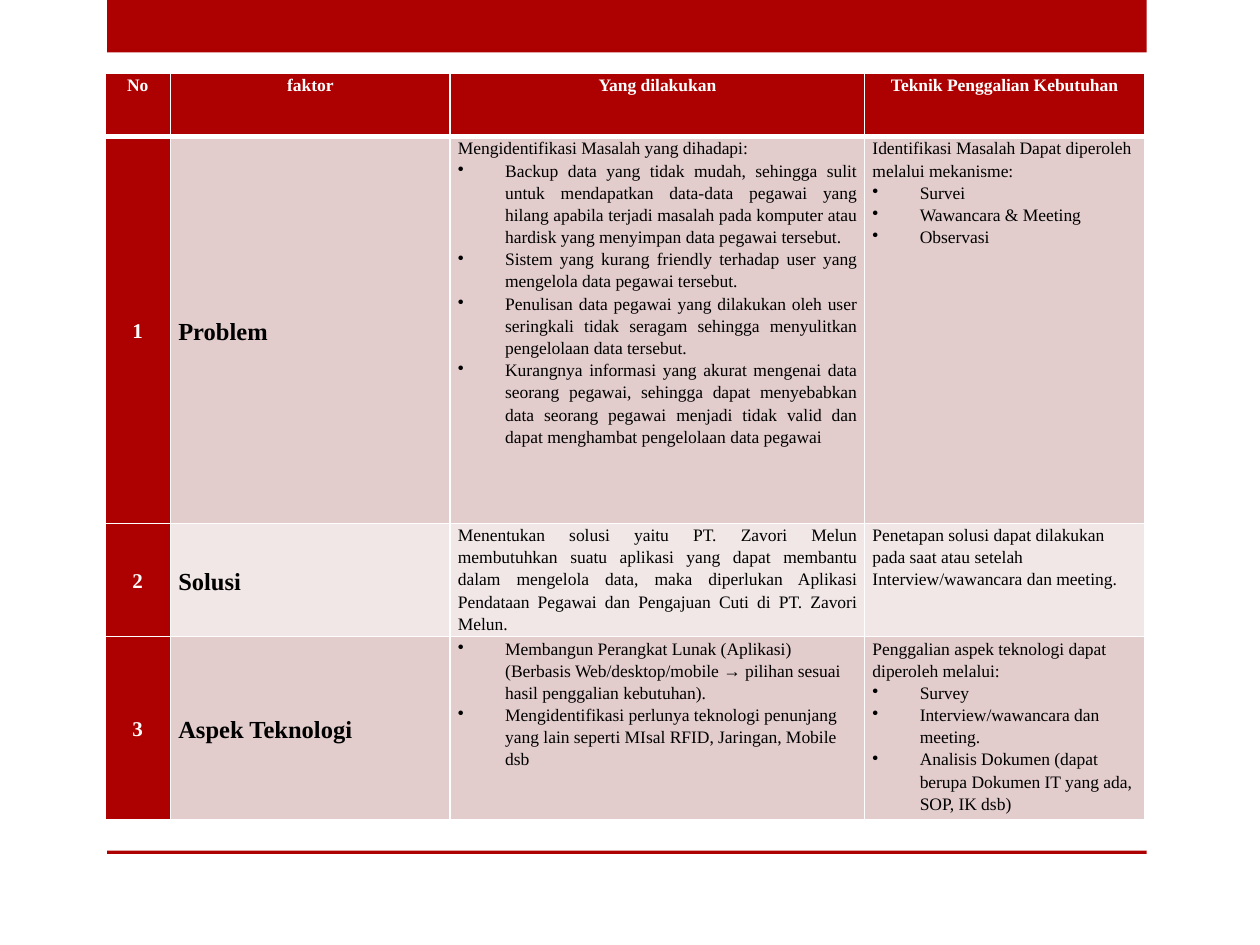
from dataclasses import dataclass

from lxml import etree
from pptx import Presentation
from pptx.dml.color import RGBColor
from pptx.enum.shapes import MSO_SHAPE
from pptx.enum.text import MSO_ANCHOR, PP_ALIGN
from pptx.oxml.ns import qn
from pptx.util import Pt

RECTANGLE = MSO_SHAPE.RECTANGLE
TOP, MIDDLE = MSO_ANCHOR.TOP, MSO_ANCHOR.MIDDLE
LEFT, CENTER, JUSTIFY = PP_ALIGN.LEFT, PP_ALIGN.CENTER, PP_ALIGN.JUSTIFY

FONT = "Times New Roman"
RED, WHITE, BLACK = "AD0101", "FFFFFF", "000000"
DARK_BAND, LIGHT_BAND = "E3CCCC", "F1E7E7"
COLUMN_WIDTHS = (37.4, 159.8, 236.9, 159.8)
ROW_HEIGHTS = (36, 221, 64.8, 104.4)
BULLET_INDENT = 27
THIN, THICK = 1, 3


@dataclass(frozen=True)
class Line:
    text: str
    bullet: bool = False
    align: PP_ALIGN = LEFT


@dataclass(frozen=True)
class Style:
    size: float
    color: str = BLACK
    bold: bool = False
    anchor: MSO_ANCHOR = TOP


@dataclass(frozen=True)
class Factor:
    name: str
    actions: list[Line]
    techniques: list[Line]


HEADER_STYLE = Style(10, WHITE, True)
NUMBER_STYLE = Style(12, WHITE, True, MIDDLE)
NAME_STYLE = Style(14, BLACK, True, MIDDLE)
BODY_STYLE = Style(10)


def bullets(*texts: str, align: PP_ALIGN = LEFT) -> list[Line]:
    return [Line(text, True, align) for text in texts]


HEADERS = ("No", "faktor", "Yang dilakukan", "Teknik Penggalian Kebutuhan")
FACTORS = (
    Factor(
        "Problem",
        [Line("Mengidentifikasi Masalah yang dihadapi:")]
        + bullets(
            "Backup data yang tidak mudah, sehingga sulit untuk mendapatkan data-data "
            "pegawai yang hilang apabila terjadi masalah pada komputer atau hardisk "
            "yang menyimpan data pegawai tersebut.",
            "Sistem yang kurang friendly terhadap user yang mengelola data pegawai "
            "tersebut.",
            "Penulisan data pegawai yang dilakukan oleh user seringkali tidak seragam "
            "sehingga menyulitkan pengelolaan data tersebut.",
            "Kurangnya informasi yang akurat mengenai data seorang pegawai, sehingga "
            "dapat menyebabkan data seorang pegawai menjadi tidak valid dan dapat "
            "menghambat pengelolaan data pegawai",
            align=JUSTIFY,
        ),
        [Line("Identifikasi Masalah Dapat diperoleh melalui mekanisme:")]
        + bullets("Survei", "Wawancara & Meeting", "Observasi"),
    ),
    Factor(
        "Solusi",
        [Line(
            "Menentukan solusi yaitu PT. Zavori Melun membutuhkan suatu aplikasi yang "
            "dapat membantu dalam mengelola data, maka diperlukan Aplikasi Pendataan "
            "Pegawai dan Pengajuan Cuti di PT. Zavori Melun.",
            align=JUSTIFY,
        )],
        [Line("Penetapan solusi dapat dilakukan pada saat atau setelah "
              "Interview/wawancara dan meeting.")],
    ),
    Factor(
        "Aspek Teknologi",
        bullets(
            "Membangun Perangkat Lunak (Aplikasi) (Berbasis Web/desktop/mobile → "
            "pilihan sesuai hasil penggalian kebutuhan).",
            "Mengidentifikasi perlunya teknologi penunjang yang lain seperti MIsal "
            "RFID, Jaringan, Mobile dsb",
        ),
        [Line("Penggalian aspek teknologi dapat diperoleh melalui:")]
        + bullets(
            "Survey",
            "Interview/wawancara dan meeting.",
            "Analisis Dokumen (dapat berupa Dokumen IT yang ada, SOP, IK dsb)",
        ),
    ),
)


def rgb(color: str) -> RGBColor:
    return RGBColor.from_string(color)


def add_bar(slide, top: float, height: float) -> None:
    bar = slide.shapes.add_shape(RECTANGLE, Pt(61.2), Pt(top), Pt(594), Pt(height))
    bar.shadow.inherit = False
    bar.fill.solid()
    bar.fill.fore_color.rgb = rgb(RED)
    bar.line.fill.background()


def add_borders(cell, top: float, bottom: float) -> None:
    properties = cell._tc.get_or_add_tcPr()
    for side, width in (("L", THIN), ("R", THIN), ("T", top), ("B", bottom)):
        border = etree.SubElement(properties, qn(f"a:ln{side}"), w=str(Pt(width)))
        fill = etree.SubElement(border, qn("a:solidFill"))
        etree.SubElement(fill, qn("a:srgbClr"), val=WHITE)


def add_bullet(paragraph) -> None:
    properties = paragraph._p.get_or_add_pPr()
    properties.set("marL", str(Pt(BULLET_INDENT)))
    properties.set("indent", str(-Pt(BULLET_INDENT)))
    etree.SubElement(properties, qn("a:buChar"), char="•")


def fill_cell(cell, lines: list[Line], style: Style, fill: str,
              top: float = THIN, bottom: float = THIN) -> None:
    add_borders(cell, top, bottom)
    cell.fill.solid()
    cell.fill.fore_color.rgb = rgb(fill)
    cell.margin_left = cell.margin_right = Pt(4.5)
    cell.margin_top = cell.margin_bottom = 0
    cell.vertical_anchor = style.anchor
    frame = cell.text_frame
    for index, line in enumerate(lines):
        paragraph = frame.add_paragraph() if index else frame.paragraphs[0]
        paragraph.text = line.text
        if line.bullet:
            add_bullet(paragraph)
        paragraph.alignment = line.align
        paragraph.line_spacing = 1.15
        font = paragraph.font
        font.name, font.size, font.bold = FONT, Pt(style.size), style.bold
        font.color.rgb = rgb(style.color)


def add_factor_table(slide) -> None:
    frame = slide.shapes.add_table(
        len(ROW_HEIGHTS), len(COLUMN_WIDTHS), Pt(60), Pt(42),
        Pt(sum(COLUMN_WIDTHS)), Pt(sum(ROW_HEIGHTS)))
    table = frame.table
    table.first_col = True
    for column, width in zip(table.columns, COLUMN_WIDTHS):
        column.width = Pt(width)
    for row, height in zip(table.rows, ROW_HEIGHTS):
        row.height = Pt(height)

    for column, header in enumerate(HEADERS):
        fill_cell(table.cell(0, column), [Line(header, align=CENTER)],
                  HEADER_STYLE, RED, bottom=THICK)
    for number, factor in enumerate(FACTORS, start=1):
        band = DARK_BAND if number % 2 else LIGHT_BAND
        contents = (
            ([Line(str(number), align=CENTER)], NUMBER_STYLE, RED),
            ([Line(factor.name)], NAME_STYLE, band),
            (factor.actions, BODY_STYLE, band),
            (factor.techniques, BODY_STYLE, band),
        )
        top = THICK if number == 1 else THIN
        for column, (lines, style, fill) in enumerate(contents):
            fill_cell(table.cell(number, column), lines, style, fill, top=top)


def main() -> None:
    presentation = Presentation()
    presentation.slide_width, presentation.slide_height = Pt(720), Pt(540)
    slide = presentation.slides.add_slide(presentation.slide_layouts[6])
    add_bar(slide, top=0, height=30)
    add_bar(slide, top=486, height=2)
    add_factor_table(slide)
    presentation.save("out.pptx")


if __name__ == "__main__":
    main()
